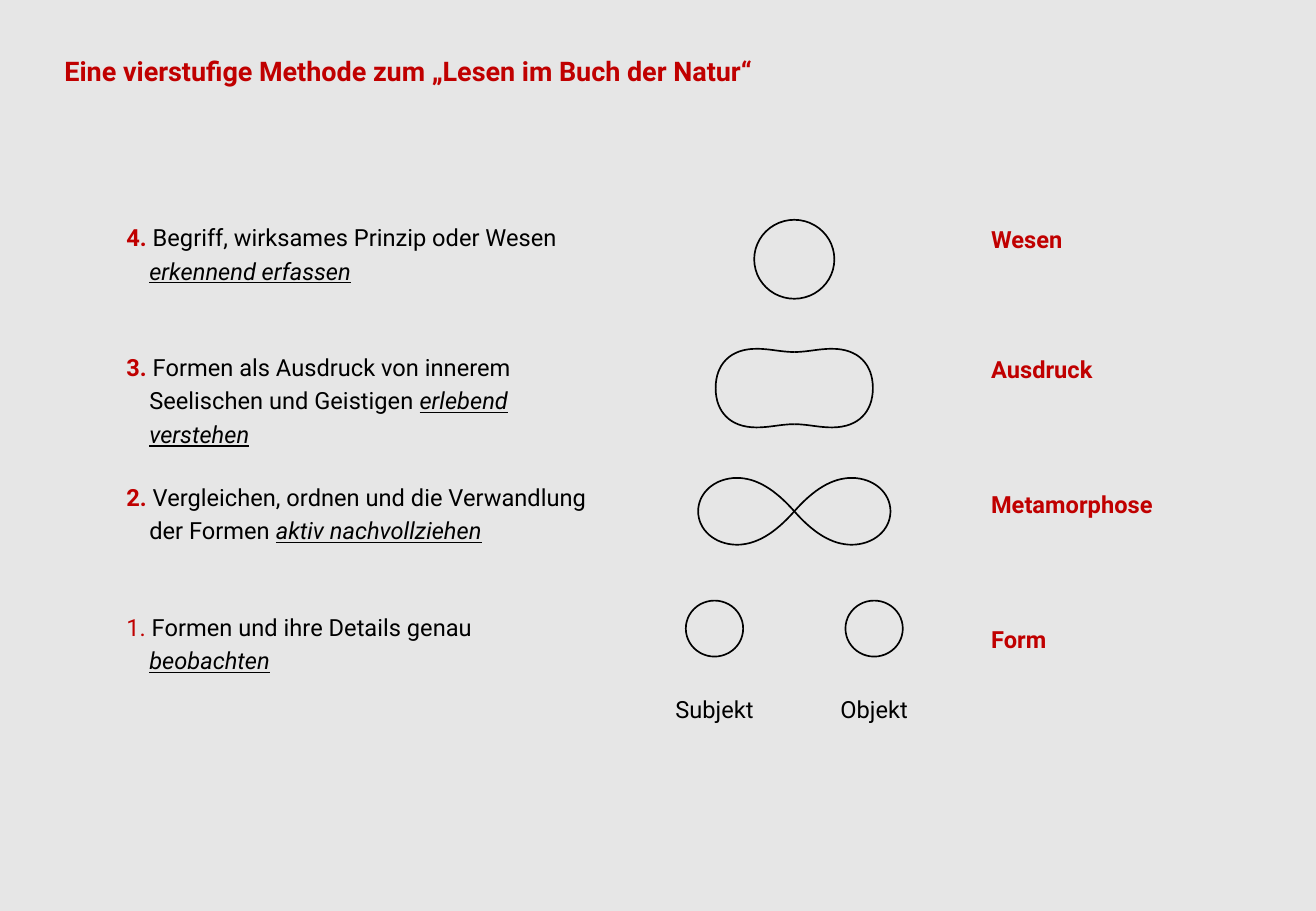
from pptx import Presentation
from pptx.dml.color import RGBColor
from pptx.enum.shapes import MSO_SHAPE
from pptx.enum.text import MSO_ANCHOR, MSO_AUTO_SIZE, PP_ALIGN
from pptx.oxml.ns import qn
from pptx.util import Pt

RED, BLACK, GREY = "C00000", "000000", "E6E6E6"
color = RGBColor.from_string


def write(para, text, size=14, tint=BLACK, bold=False, stress=False):
    """Add text to a paragraph; a newline becomes a line break."""
    for num, line in enumerate(text.split("\n")):
        if num:
            para.add_line_break()
        if line:
            run = para.add_run()
            run.text = line
            font = run.font
            font.name, font.size, font.bold = "Roboto", Pt(size), bold
            font.italic = font.underline = stress
            font.color.rgb = color(tint)


def grid(left, top, width, rows):
    """Add a plain one-column table and return its paragraphs."""
    frame = slide.shapes.add_table(len(rows), 1, Pt(left), Pt(top), Pt(width), Pt(sum(rows)))
    table = frame.table
    table.first_row = table.horz_banding = False
    # Style without fills and grid lines
    style = frame.element.find(".//" + qn("a:tableStyleId"))
    style.text = "{2D5ABB26-0587-4C30-8999-92F81FD0307C}"
    paras = []
    for row, height in zip(table.rows, rows):
        row.height = Pt(height)
        cell = row.cells[0]
        cell.fill.background()
        cell.margin_left = cell.margin_right = Pt(14.4)
        cell.margin_top = cell.margin_bottom = Pt(8.5)
        para = cell.text_frame.paragraphs[0]
        para.line_spacing = Pt(20)
        paras.append(para)
    return paras


deck = Presentation()
deck.slide_width, deck.slide_height = Pt(780), Pt(540)
slide = deck.slides.add_slide(deck.slide_layouts[5])
slide.background.fill.solid()
slide.background.fill.fore_color.rgb = color(GREY)

# Title
title = slide.shapes.title
title.left, title.top, title.width, title.height = Pt(31), Pt(29), Pt(562), Pt(27)
frame = title.text_frame
frame.auto_size = MSO_AUTO_SIZE.NONE
frame.vertical_anchor = MSO_ANCHOR.TOP
frame.paragraphs[0].alignment = PP_ALIGN.LEFT
write(frame.paragraphs[0], "Eine vierstufige Methode zum „Lesen im Buch der Natur“",
      size=16, tint=RED, bold=True)

# Four steps: number, text, stressed words
steps = [
    ("4.", " Begriff, wirksames Prinzip oder Wesen\n", "erkennend erfassen"),
    ("3.", " Formen als Ausdruck von innerem\nSeelischen und Geistigen ", "erlebend\nverstehen"),
    ("2.", " Vergleichen, ordnen und die Verwandlung\nder Formen ", "aktiv nachvollziehen"),
    ("1.", " Formen und ihre Details genau\n", "beobachten"),
]
for para, (mark, text, key) in zip(grid(60.5, 121, 338, [77] * 4), steps):
    props = para._p.get_or_add_pPr()
    props.set("marL", str(Pt(13.6)))
    props.set("indent", str(Pt(-13.6)))
    write(para, mark, tint=RED, bold=mark != "1.")
    write(para, text)
    write(para, key, stress=True)

# Names of the stages
names = ["Wesen", "Ausdruck", "Metamorphose", "Form"]
for para, name in zip(grid(573, 122.4, 136, [77, 80, 80, 57]), names):
    write(para, name, tint=RED, bold=True)

# Circles: centre x, centre y, width, height
mid, gap = 470.8, 47.3
drawn = []
for x, y, wide, high in [(mid, 153.7, 47.5, 46.8),
                         (mid - gap, 372.6, 34, 33.2), (mid + gap, 372.6, 34, 33.2)]:
    drawn.append(slide.shapes.add_shape(
        MSO_SHAPE.OVAL, Pt(x - wide / 2), Pt(y - high / 2), Pt(wide), Pt(high)))

# Merged outline and figure eight: centre y, Bezier points of one quarter, closed
curves = [
    (230.1, [(0, 21.4), (8, 21.4), (14, 23.3), (22.5, 23.3),
             (38, 23.3), (46.6, 14), (46.6, 0)], False),
    (303.1, [(0, 0), (11.5, 13), (22.5, 19.8), (34, 19.8),
             (47, 19.8), (57, 11), (57, 0)], True),
]
for y, knots, closed in curves:
    arc = [knots[0]]
    for start in (0, 3):
        for step in range(1, 17):
            t = step / 16
            parts = ((1 - t) ** 3, 3 * t * (1 - t) ** 2, 3 * t * t * (1 - t), t ** 3)
            arc.append([sum(part * knots[start + k][axis] for k, part in enumerate(parts))
                        for axis in (0, 1)])
    half = arc + [(dx, -dy) for dx, dy in arc[-2::-1]]
    for side in (-1, 1):
        dots = [(Pt(mid + side * dx), Pt(y - dy)) for dx, dy in half]
        pen = slide.shapes.build_freeform(*dots[0])
        pen.add_line_segments(dots[1:], close=closed)
        drawn.append(pen.convert_to_shape())

# Thin black outlines
for shape in drawn:
    shape.shadow.inherit = False
    shape.fill.background()
    shape.line.color.rgb = color(BLACK)
    shape.line.width = Pt(1)

# Labels under the two small circles
for x, label in [(mid - gap, "Subjekt"), (mid + gap, "Objekt")]:
    frame = slide.shapes.add_textbox(Pt(x - 31), Pt(408.2), Pt(62), Pt(24.5)).text_frame
    frame.word_wrap = False
    frame.paragraphs[0].alignment = PP_ALIGN.CENTER
    write(frame.paragraphs[0], label)

deck.save("out.pptx")
